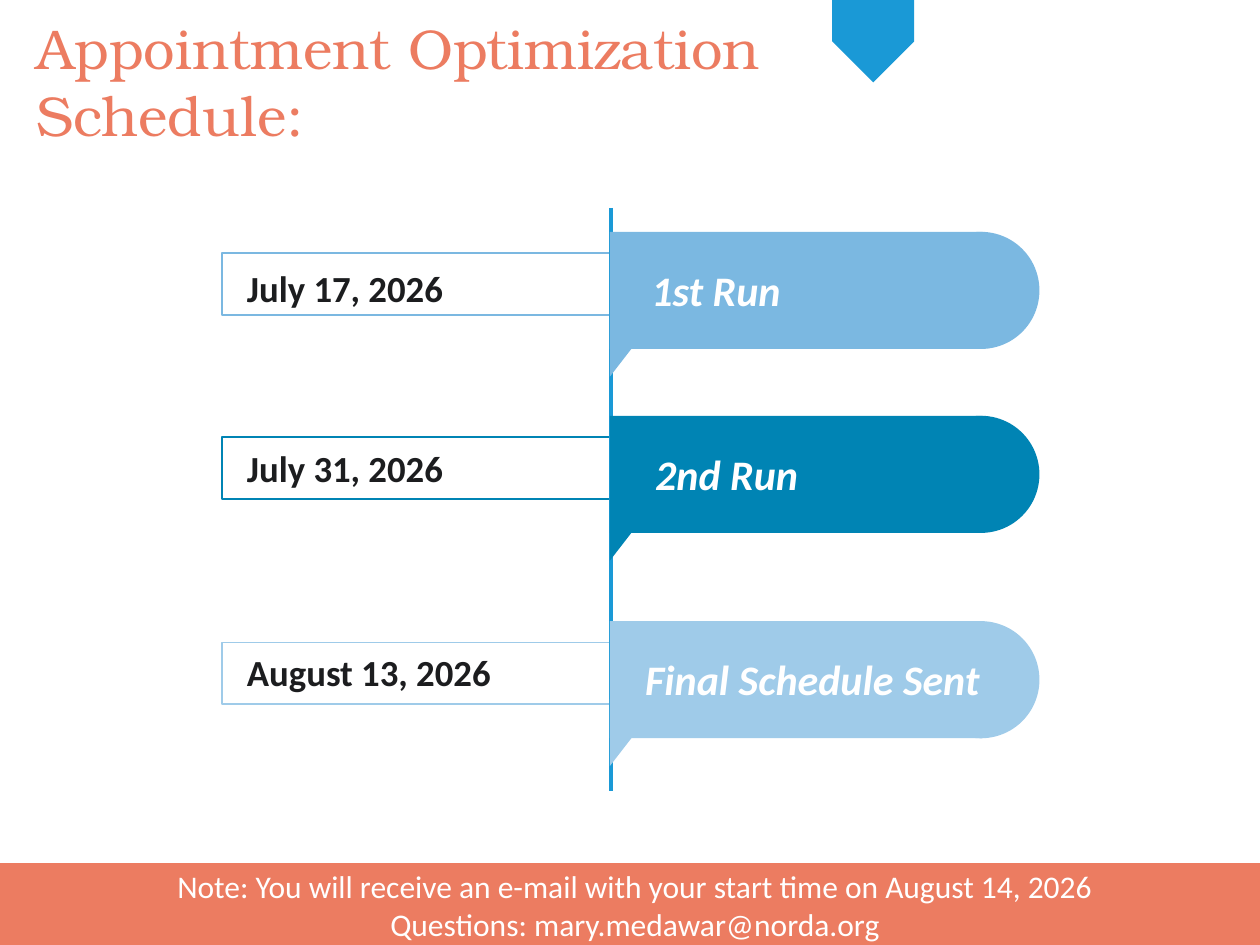
import pptx
import pptx.util
import pptx.dml.color
import pptx.enum.shapes
import pptx.enum.text
import pptx.oxml.ns
import lxml.etree

Inches = pptx.util.Inches
Pt = pptx.util.Pt
SHAPE = pptx.enum.shapes.MSO_SHAPE
CORAL, BLUE, WHITE, INK = "EC7C61", "1A99D6", "FFFFFF", "1C1D1F"


def rgb(color):
    return pptx.dml.color.RGBColor.from_string(color)


def add_box(kind, x, y, w, h, fill=None, line=None, lines=(), size=18, color=WHITE,
            font="Calibri", bold=None, italic=None, inset=(0.07, 0.04), align=None):
    """Add a preset shape, or a text box when kind is None."""
    pos = (Inches(x), Inches(y), Inches(w), Inches(h))
    if kind is None:
        sp = s.shapes.add_textbox(*pos)
    else:
        sp = s.shapes.add_shape(kind, *pos)
        sp.shadow.inherit = False
        sp.fill.solid()
        sp.fill.fore_color.rgb = rgb(fill)
        if line:
            sp.line.color.rgb = rgb(line)
            sp.line.width = Pt(1)
        else:
            sp.line.fill.background()
    tf = sp.text_frame
    tf.word_wrap = True
    tf.vertical_anchor = pptx.enum.text.MSO_ANCHOR.TOP
    tf.margin_left = tf.margin_right = Inches(inset[0])
    tf.margin_top = tf.margin_bottom = Inches(inset[1])
    for i, text in enumerate(lines):
        p = tf.paragraphs[0] if i == 0 else tf.add_paragraph()
        p.alignment = align
        r = p.add_run()
        r.text = text
        r.font.name = font
        r.font.size = Pt(size)
        r.font.bold = bold
        r.font.italic = italic
        r.font.color.rgb = rgb(color)
    return sp


prs = pptx.Presentation()
prs.slide_width, prs.slide_height = Inches(10), Inches(7.5)
s = prs.slides.add_slide(prs.slide_layouts[6])

# Milestones: banner top, colour, date, date text top, label, label left
milestones = [
    (1.84, "7BB8E1", "July 17, 2026", 2.07, "1st Run", 5.1),
    (3.3, "0084B4", "July 31, 2026", 3.5, "2nd Run", 5.13),
    (4.93, "9FCBE9", "August 13, 2026", 5.12, "Final Schedule Sent", 5.05),
]

# Date boxes left of the timeline
for top, color, date, date_top, label, label_left in milestones:
    add_box(SHAPE.RECTANGLE, 1.76, top + 0.17, 3.14, 0.49, WHITE, line=color)
    add_box(None, 1.89, date_top, 2.77, 0.43, lines=[date], size=21, color=INK, bold=True)

# Timeline
cx = s.shapes.add_connector(pptx.enum.shapes.MSO_CONNECTOR.STRAIGHT,
                            Inches(4.85), Inches(1.65), Inches(4.85), Inches(6.28))
cx.line.color.rgb = rgb(BLUE)
cx.line.width = Pt(2)
lxml.etree.SubElement(cx._element.spPr, pptx.oxml.ns.qn("a:effectLst"))

# Banners with a rounded end and a folded tail
for top, color, date, date_top, label, label_left in milestones:
    add_box(SHAPE.OVAL, 7.32, top, 0.93, 0.93, color)
    add_box(SHAPE.RECTANGLE, 4.84, top, 2.96, 0.93, color)
    tail = add_box(SHAPE.ISOSCELES_TRIANGLE, 4.78, top + 0.68, 0.53, 0.41, color)
    tail.adjustments[0] = 0
    tail.rotation = 90
    add_box(None, label_left, top + 0.22, 2.99, 0.4, lines=[label], size=24,
            bold=True, italic=True)

# Title and ribbon
add_box(None, 0.19, 0.06, 6.41, 1.18, lines=["Appointment Optimization Schedule:"],
        size=32, color=CORAL, font="TeX Gyre Bonum", inset=(0.1, 0.05))
ribbon = add_box(SHAPE.PENTAGON, 6.6, 0, 0.66, 0.65, BLUE)
ribbon.rotation = 90

# Footer note
add_box(SHAPE.RECTANGLE, 0, 6.85, 10, 0.67, CORAL)
add_box(None, 0.57, 6.83, 8.94, 0.71, inset=(0.1, 0.05),
        lines=["Note: You will receive an e-mail with your start time on August 14, 2026",
               "Questions: mary.medawar@norda.org"],
        align=pptx.enum.text.PP_ALIGN.CENTER)

prs.save("out.pptx")
